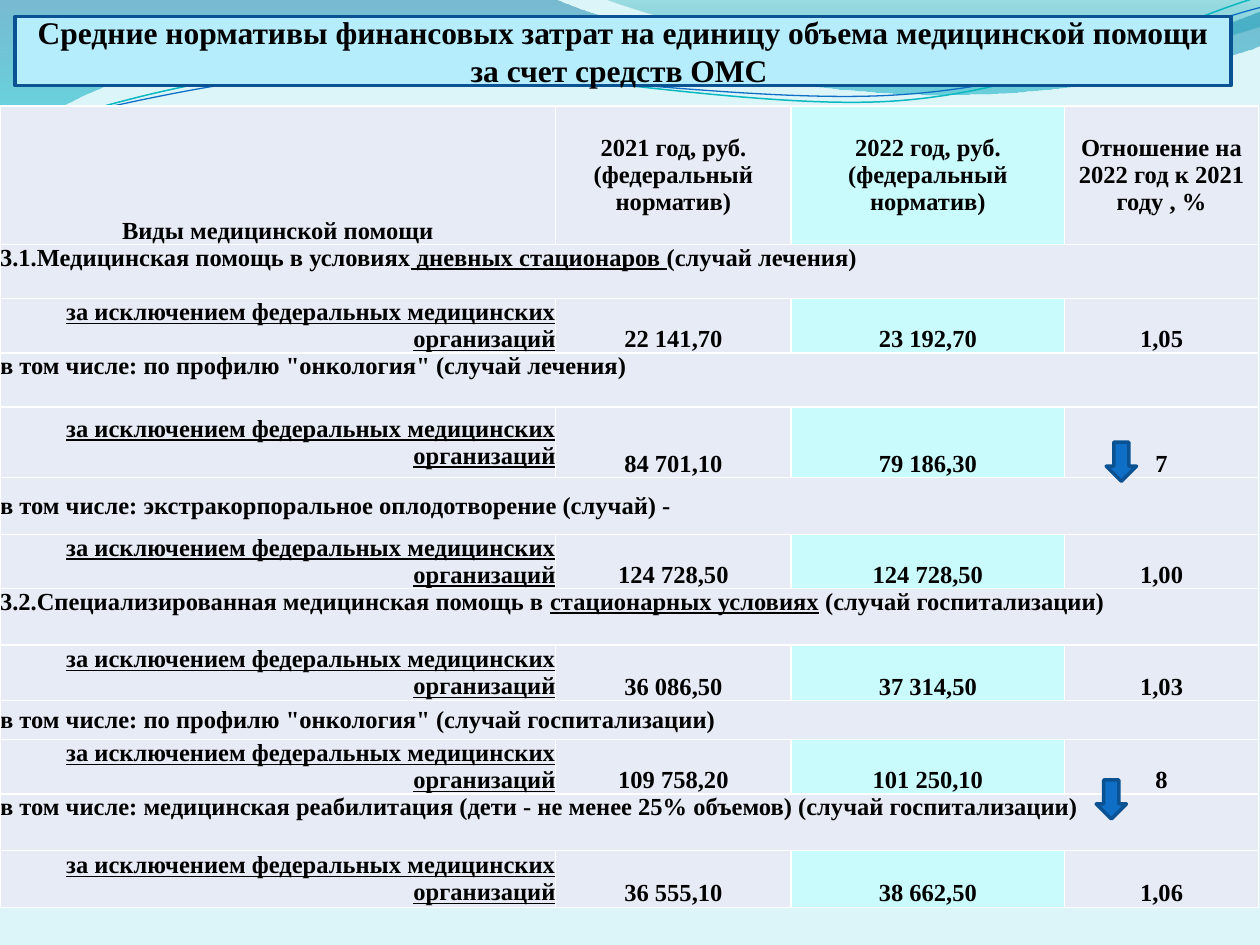
import pptx
import pptx.dml.color
import pptx.enum.shapes
import pptx.enum.text
import pptx.oxml
import pptx.oxml.ns
import pptx.util

Inches = pptx.util.Inches
Pt = pptx.util.Pt
Align = pptx.enum.text.PP_ALIGN
Anchor = pptx.enum.text.MSO_ANCHOR
Kind = pptx.enum.shapes.MSO_SHAPE

FONT = "Times New Roman"
COLORS = {
    "back": "DBF5F9", "text": "000000", "cell": "E7EBF5", "accent": "C9FAFC",
    "border": "FFFFFF", "title": "B5EDFD", "edge": "0B5292", "arrow": "0F6FC6",
    "teal": "0AB8BF",
}
NS = pptx.oxml.ns.nsdecls("a")
qn = pptx.oxml.ns.qn

WAVES = [
    ([(0, 0), (4.4, -0.01),
      (4.76, 0.17, 6.64, 0.63, 7.58, 0.63), (8.53, 0.63, 9.58, 0.26, 10, 0.09),
      (10.01, 0.36),
      (9.83, 0.44, 8.7, 0.76, 7.46, 0.75), (6.22, 0.75, 3.82, 0.28, 2.57, 0.34),
      (1.29, 0.36, 0.46, 0.83, -0.01, 1.13)],
     [(0, "0074A1", 45), (100, "00C6CF", 55)]),
    ([(4.79, -0.01),
      (5.09, 0.11, 6.82, 0.62, 7.69, 0.65), (8.56, 0.69, 9.61, 0.32, 10, 0.21),
      (10, 0)],
     [(0, "00A1A9", 30), (80, "008BBF", 45)]),
]
CURVES = [
    ([(0, 1.11), (0.48, 0.93, 1.58, 0.57, 2.77, 0.52),
      (3.95, 0.47, 5.93, 0.89, 7.13, 0.8), (8.33, 0.71, 9.38, 0.15, 9.98, -0.02)],
     "teal", 0.85),
    ([(0, 1.04), (0.47, 0.96, 1.64, 0.61, 2.83, 0.56),
      (4.03, 0.51, 5.97, 0.84, 7.17, 0.75), (8.36, 0.67, 9.41, 0.21, 10, 0.06)],
     "arrow", 0.75),
]

COLS = [4.41, 1.87, 2.17, 1.54]
HEAD = ["Виды медицинской помощи", "2021 год, руб. (федеральный норматив)",
        "2022 год, руб. (федеральный норматив)",
        "Отношение на 2022 год к 2021 году , %"]
LABEL = "_за исключением федеральных медицинских организаций_"
GROUPS = [
    (0.43, Anchor.TOP,
     "3.1.Медицинская помощь в условиях_ дневных стационаров _(случай лечения)",
     0.43, ["22 141,70", "23 192,70", "1,05"]),
    (0.43, Anchor.TOP, 'в том числе: по профилю "онкология" (случай лечения)',
     0.56, ["84 701,10", "79 186,30", "7"]),
    (0.45, Anchor.MIDDLE, "в том числе: экстракорпоральное оплодотворение (случай) -",
     0.43, ["124 728,50", "124 728,50", "1,00"]),
    (0.45, Anchor.TOP,
     "3.2.Специализированная медицинская помощь в _стационарных условиях_"
     " (случай госпитализации)",
     0.44, ["36 086,50", "37 314,50", "1,03"]),
    (0.31, Anchor.MIDDLE, 'в том числе: по профилю "онкология" (случай госпитализации)',
     0.43, ["109 758,20", "101 250,10", "8"]),
    (0.45, Anchor.TOP,
     "в том числе: медицинская реабилитация (дети - не менее 25% объемов)"
     " (случай госпитализации)",
     0.45, ["36 555,10", "38 662,50", "1,06"]),
]


def color(name):
    return pptx.dml.color.RGBColor.from_string(COLORS[name])


def paint(item, name):
    item.fill.solid()
    item.fill.fore_color.rgb = color(name)


def stroke(shape, name, width):
    shape.line.color.rgb = color(name)
    shape.line.width = Pt(width)


def write(frame, text, size, align):
    para = frame.paragraphs[0]
    para.alignment = align
    para.font.size = Pt(size)
    para.font.name = FONT
    para.font.bold = True
    para.font.color.rgb = color("text")
    for i, part in enumerate(text.split("_")):
        if part:
            run = para.add_run()
            run.text = part
            if i % 2:
                run.font.underline = True


def add_path(slide, steps, close):
    ends = [tuple(map(Inches, step[-2:])) for step in steps]
    form = slide.shapes.build_freeform(*ends[0])
    form.add_line_segments(ends[1:], close=close)
    shape = form.convert_to_shape()
    shape.shadow.inherit = False
    lines = list(shape.element.iter(qn("a:lnTo")))
    for line, step in zip(lines, steps[1:]):
        if len(step) == 6:
            points = "".join(
                f'<a:pt x="{Inches(x) - shape.left}" y="{Inches(y) - shape.top}"/>'
                for x, y in zip(step[::2], step[1::2]))
            line.getparent().replace(line, pptx.oxml.parse_xml(
                f"<a:cubicBezTo {NS}>{points}</a:cubicBezTo>"))
    return shape


def add_wave(slide, steps, stops):
    shape = add_path(slide, steps, True)
    shape.line.fill.background()
    marks = "".join(
        f'<a:gs pos="{pos * 1000}"><a:srgbClr val="{tone}">'
        f'<a:alpha val="{alpha * 1000}"/></a:srgbClr></a:gs>'
        for pos, tone, alpha in stops)
    grad = pptx.oxml.parse_xml(
        f'<a:gradFill {NS}><a:gsLst>{marks}</a:gsLst>'
        '<a:lin ang="5400000" scaled="0"/></a:gradFill>')
    shape.element.spPr.find(qn("a:custGeom")).addnext(grad)


def add_curve(slide, steps, name, width):
    shape = add_path(slide, steps, False)
    shape.fill.background()
    stroke(shape, name, width)


def add_box(slide, kind, fill, *place):
    shape = slide.shapes.add_shape(kind, *map(Inches, place))
    shape.shadow.inherit = False
    paint(shape, fill)
    stroke(shape, "edge", 2)
    return shape


def set_cell(cell, text, align, anchor, fill="cell"):
    cell.margin_left = cell.margin_right = cell.margin_top = cell.margin_bottom = 0
    cell.vertical_anchor = anchor
    props = cell._tc.get_or_add_tcPr()
    for side in "LRTB":
        props.append(pptx.oxml.parse_xml(
            f'<a:ln{side} {NS} w="{Pt(1)}"><a:solidFill><a:srgbClr '
            f'val="{COLORS["border"]}"/></a:solidFill></a:ln{side}>'))
    paint(cell, fill)
    write(cell.text_frame, text, 14, align)


def fill_row(table, row, texts, first, rest):
    for col, text in enumerate(texts):
        align, anchor = rest if col else first
        set_cell(table.cell(row, col), text, align, anchor,
                 "accent" if col == 2 else "cell")


def add_grid(slide):
    highs = [1.1] + [h for g in GROUPS for h in (g[0], g[3])]
    table = slide.shapes.add_table(
        len(highs), len(COLS), 0, Inches(0.84),
        Inches(sum(COLS)), Inches(sum(highs))).table
    table.first_row = table.horz_banding = False
    for col, width in zip(table.columns, COLS):
        col.width = Inches(width)
    for row, high in zip(table.rows, highs):
        row.height = Inches(high)
    low, mid = (Align.CENTER, Anchor.BOTTOM), (Align.CENTER, Anchor.MIDDLE)
    fill_row(table, 0, HEAD, low, mid)
    for i, (_, anchor, name, _, values) in enumerate(GROUPS):
        row = 1 + 2 * i
        for col in range(len(COLS)):
            set_cell(table.cell(row, col), "" if col else name, Align.LEFT, anchor)
        table.cell(row, 0).merge(table.cell(row, len(COLS) - 1))
        fill_row(table, row + 1, [LABEL] + values, (Align.RIGHT, Anchor.MIDDLE), low)


def main():
    deck = pptx.Presentation()
    deck.slide_width, deck.slide_height = Inches(10), Inches(7.5)
    slide = deck.slides.add_slide(deck.slide_layouts[6])
    paint(slide.background, "back")
    for wave in WAVES:
        add_wave(slide, *wave)
    for curve in CURVES:
        add_curve(slide, *curve)
    add_grid(slide)
    title = add_box(slide, Kind.RECTANGLE, "title", 0.12, 0.13, 9.65, 0.55)
    title.text_frame.word_wrap = True
    title.text_frame.vertical_anchor = Anchor.MIDDLE
    write(title.text_frame, "Средние нормативы финансовых затрат на единицу объема "
          "медицинской помощи за счет средств ОМС ", 18, Align.CENTER)
    for left, top in [(8.78, 3.51), (8.7, 6.19)]:
        add_box(slide, Kind.DOWN_ARROW, "arrow", left, top, 0.24, 0.31)
    deck.save("out.pptx")


if __name__ == "__main__":
    main()
